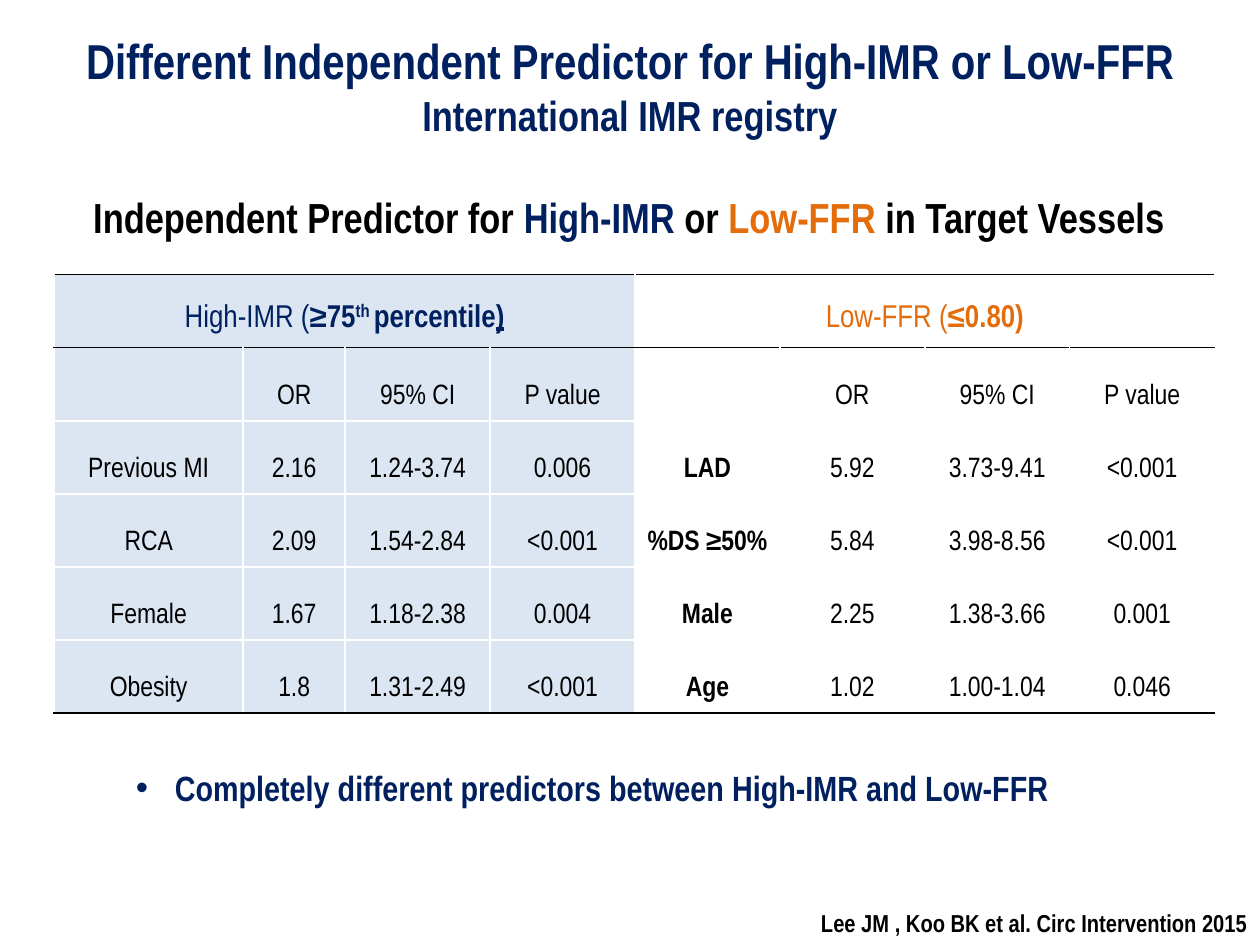
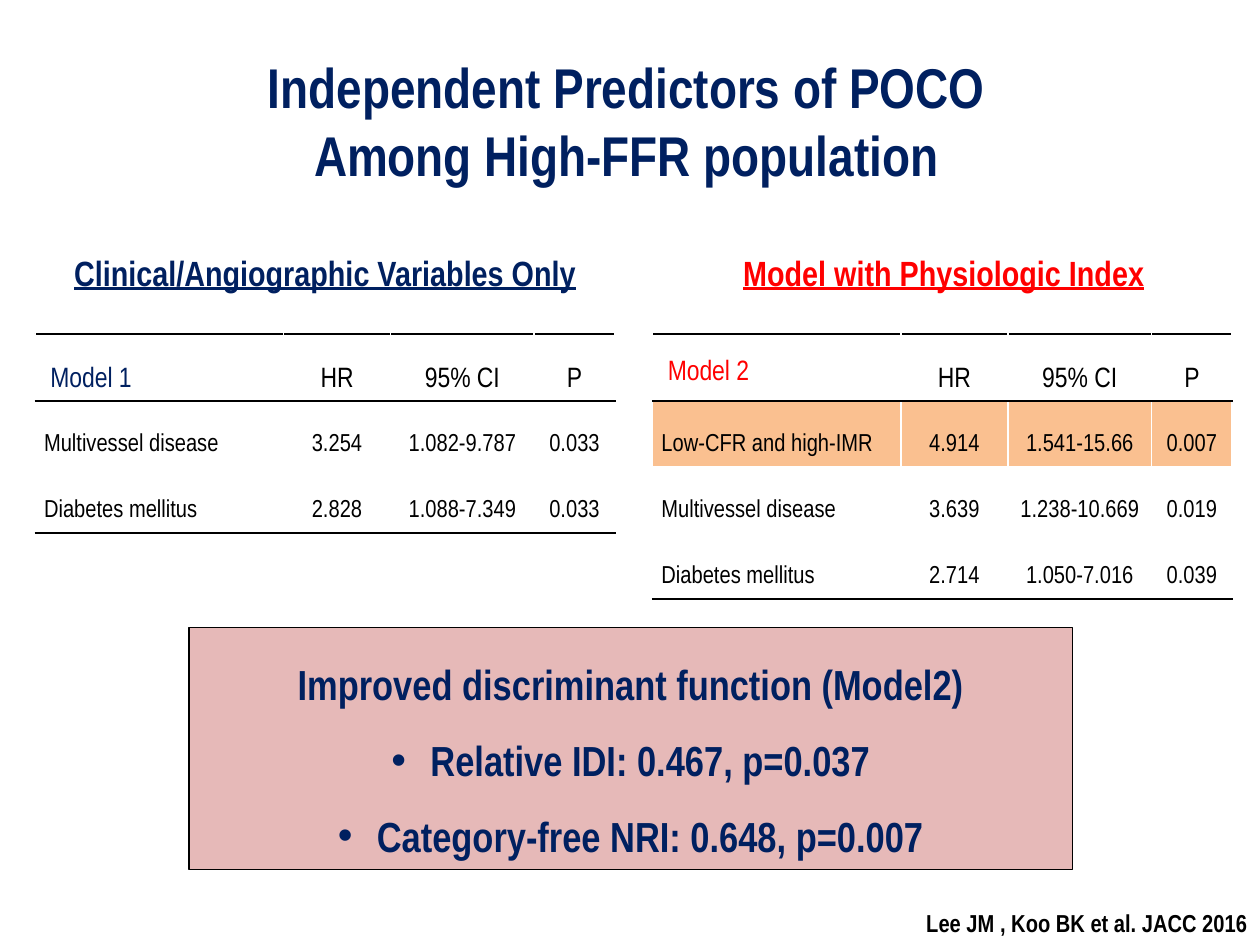
from dataclasses import dataclass, replace

from lxml import etree
from pptx import Presentation
from pptx.dml.color import RGBColor
from pptx.enum.shapes import MSO_SHAPE
from pptx.enum.text import MSO_ANCHOR, MSO_AUTO_SIZE, PP_ALIGN
from pptx.oxml.ns import qn
from pptx.util import Inches, Pt

LEFT, CENTER, RIGHT, JUSTIFY = PP_ALIGN.LEFT, PP_ALIGN.CENTER, PP_ALIGN.RIGHT, PP_ALIGN.JUSTIFY
TOP, MIDDLE = MSO_ANCHOR.TOP, MSO_ANCHOR.MIDDLE
GROW, FIXED = MSO_AUTO_SIZE.SHAPE_TO_FIT_TEXT, MSO_AUTO_SIZE.NONE
RECTANGLE = MSO_SHAPE.RECTANGLE

WIDTH, HEIGHT = Inches(10), Inches(7.5)
COLUMNS, ROWS = 100, 75
FONT = "Arial Narrow"
NAVY, ORANGE, RED, BLACK, WHITE = "002060", "E46C0A", "FF0000", "000000", "FFFFFF"
PALE_BLUE, PEACH, ROSE = "DCE6F2", "FAC090", "E6B9B8"


@dataclass
class Span:
    """Part of a paragraph; a value of None follows the paragraph."""
    text: str
    color: str = None
    bold: bool = None
    underline: bool = None
    superscript: bool = False


@dataclass
class Para:
    """Text is a string or a list of spans; margin and indent are in inches."""
    text: object
    size: int = 24
    color: str = NAVY
    bold: bool = True
    underline: bool = None
    align: int = CENTER
    spacing: float = None
    margin: float = 0
    indent: float = 0
    bullet: bool = False


@dataclass
class Cell:
    para: Para
    fill: str = None
    anchor: int = MIDDLE


def rgb(color):
    return RGBColor.from_string(color)


def column(count):
    return int(WIDTH * count / COLUMNS)


def row(count):
    return int(HEIGHT * count / ROWS)


def place(left, top, width, height):
    return column(left), row(top), column(width), row(height)


class Slides:
    def __init__(self):
        self.deck = Presentation()
        self.deck.slide_width, self.deck.slide_height = WIDTH, HEIGHT
        self.page = None

    def new_page(self):
        self.page = self.deck.slides.add_slide(self.deck.slide_layouts[6])

    def add_paras(self, frame, paras):
        for index, content in enumerate(paras):
            para = frame.add_paragraph() if index else frame.paragraphs[0]
            para.alignment = content.align
            if content.spacing:
                para.line_spacing = content.spacing
            font = para.font
            font.name, font.size = FONT, Pt(content.size)
            font.bold, font.underline = content.bold, content.underline
            font.color.rgb = rgb(content.color)
            self.indent(para, content)
            spans = content.text
            for span in [Span(spans)] if isinstance(spans, str) else spans:
                self.add_span(para, span)

    def indent(self, para, content):
        properties = para._p.get_or_add_pPr()
        properties.set("marL", str(Inches(content.margin)))
        properties.set("indent", str(Inches(content.indent)))
        if content.bullet:
            bullet_font = etree.Element(qn("a:buFont"), typeface="Arial")
            bullet = etree.Element(qn("a:buChar"), char="•")
            defaults = properties.find(qn("a:defRPr"))
            defaults.addprevious(bullet_font)
            defaults.addprevious(bullet)

    def add_span(self, para, span):
        run = para.add_run()
        run.text = span.text
        if span.color:
            run.font.color.rgb = rgb(span.color)
        if span.bold is not None:
            run.font.bold = span.bold
        if span.underline is not None:
            run.font.underline = span.underline
        if span.superscript:
            run._r.get_or_add_rPr().set("baseline", "30000")

    def text(self, at, *paras, anchor=TOP, size_rule=GROW, wrap=True):
        box = self.page.shapes.add_textbox(*place(*at))
        self.fill_frame(box.text_frame, paras, anchor, size_rule, wrap)

    def fill_frame(self, frame, paras, anchor, size_rule, wrap):
        frame.word_wrap = wrap
        frame.auto_size = size_rule
        frame.vertical_anchor = anchor
        self.add_paras(frame, paras)

    def panel(self, at, fill, *paras):
        shape = self.page.shapes.add_shape(RECTANGLE, *place(*at))
        shape.shadow.inherit = False
        shape.fill.solid()
        shape.fill.fore_color.rgb = rgb(fill)
        shape.line.color.rgb = rgb(BLACK)
        shape.line.width = Pt(0.75)
        self.fill_frame(shape.text_frame, paras, TOP, GROW, True)

    def heading(self, left, text, color):
        self.text((left, 17.8, 43.2, 5.4),
                  Para(text, 20, color, underline=True, spacing=1.5))

    def citation(self, width, text):
        self.text((COLUMNS - width, 71.6, width, 3.4),
                  Para(text, 14, BLACK, align=RIGHT), wrap=False)

    def table(self, left, top, widths, row_height, cells):
        """Draw rows of cells; a None continues the cell on its left."""
        at = place(left, top, sum(widths), row_height * len(cells))
        table = self.page.shapes.add_table(len(cells), len(widths), *at).table
        table.first_row = table.horz_banding = False
        for index, width in enumerate(widths):
            table.columns[index].width = column(width)
        for y, line in enumerate(cells):
            table.rows[y].height = row(row_height)
            for x, content in enumerate(line):
                cell = table.cell(y, x)
                self.borders(cell, y < 2, y in (0, len(cells) - 1))
                if content:
                    self.fill_cell(cell, content)
                    end = x
                    while end + 1 < len(line) and line[end + 1] is None:
                        end += 1
                    if end > x:
                        cell.merge(table.cell(y, end))

    def fill_cell(self, cell, content):
        cell.margin_left = cell.margin_right = Inches(0.07)
        cell.margin_top = cell.margin_bottom = 0
        cell.vertical_anchor = content.anchor
        if content.fill:
            cell.fill.solid()
            cell.fill.fore_color.rgb = rgb(content.fill)
        else:
            cell.fill.background()
        self.add_paras(cell.text_frame, [replace(content.para, spacing=2)])

    def borders(self, cell, black_top, black_bottom):
        properties = cell._tc.get_or_add_tcPr()
        sides = {"lnL": False, "lnR": False, "lnT": black_top, "lnB": black_bottom}
        for side, black in sides.items():
            line = etree.SubElement(properties, qn(f"a:{side}"), w=str(Pt(1)))
            fill = etree.SubElement(line, qn("a:solidFill"))
            etree.SubElement(fill, qn("a:srgbClr"), val=BLACK if black else WHITE)


def predictor_page(slides):
    slides.new_page()
    slides.text((5, 1.3, 90, 10.9),
                Para("Different Independent Predictor for High-IMR or Low-FFR", 28),
                Para("International IMR registry"),
                anchor=MIDDLE, size_rule=FIXED)
    high = Para([Span("High-IMR (", bold=False), Span("≥75"),
                 Span("th ", superscript=True), Span("percentile"),
                 Span(")", underline=True)], 18)
    low = Para([Span("Low-FFR (", bold=False), Span("≤0.80)")], 18, ORANGE)
    cells = [[Cell(high, PALE_BLUE, TOP), None, None, None,
              Cell(low, anchor=TOP), None, None, None]]
    measures = ["", "OR", "95% CI", "P value"]
    values = [
        measures + measures,
        ["Previous MI", "2.16", "1.24-3.74", "0.006", "LAD", "5.92", "3.73-9.41", "<0.001"],
        ["RCA", "2.09", "1.54-2.84", "<0.001", "%DS ≥50%", "5.84", "3.98-8.56", "<0.001"],
        ["Female", "1.67", "1.18-2.38", "0.004", "Male", "2.25", "1.38-3.66", "0.001"],
        ["Obesity", "1.8", "1.31-2.49", "<0.001", "Age", "1.02", "1.00-1.04", "0.046"],
    ]
    for line in values:
        cells.append([Cell(Para(text, 16, BLACK, bold=x == 4), PALE_BLUE if x < 4 else None)
                      for x, text in enumerate(line)])
    slides.table(4.3, 21.8, [15, 8.1] + [11.5] * 6, 5.8, cells)
    slides.text((5.4, 14.7, 89, 5),
                Para([Span("Independent Predictor for "), Span("High-IMR", NAVY),
                      Span(" or "), Span("Low-FFR", ORANGE),
                      Span(" in Target Vessels")], color=BLACK))
    slides.citation(36.2, "Lee JM , Koo BK et al. Circ Intervention 2015")
    slides.text((9.8, 58.7, 80.3, 5.4),
                Para("Completely different predictors between High-IMR and Low-FFR", 20,
                     align=JUSTIFY, spacing=1.5, margin=0.31, indent=-0.31, bullet=True))


def model_table(slides, left, name, color, anchor, values, highlight=None):
    header = [Cell(Para(name, 16, color, False, align=LEFT, margin=0.05), anchor=anchor)]
    header += [Cell(Para(text, 16, BLACK, False)) for text in ("HR", "95% CI", "P")]
    body = [[Cell(Para(text, 14, BLACK, False, align=CENTER if x else LEFT),
                  PEACH if line[0] == highlight else None)
             for x, text in enumerate(line)] for line in values]
    slides.table(left, 26.5, [19.7, 8.5, 11.4, 6.4], 5.24, [header] + body)


def model_page(slides):
    slides.new_page()
    slides.text((0, 3.7, 99.5, 11.8),
                Para("Independent Predictors of POCO", 32, indent=-0.11),
                Para("Among High-FFR population", 32))
    points = [Para(text, spacing=1.5, margin=0.31, indent=-0.31, bullet=True)
              for text in ("Relative IDI: 0.467, p=0.037", "Category-free NRI: 0.648, p=0.007")]
    slides.panel((15, 49.8, 70.1, 19.2), ROSE,
                 Para("Improved discriminant function (Model2)", spacing=1.5, indent=-0.24),
                 *points)
    model_table(slides, 2.8, "Model 1", NAVY, MIDDLE, [
        ["Multivessel disease", "3.254", "1.082-9.787", "0.033"],
        ["Diabetes mellitus", "2.828", "1.088-7.349", "0.033"],
    ])
    combined = "Low-CFR and high-IMR"
    model_table(slides, 51.8, "Model 2", RED, TOP, [
        [combined, "4.914", "1.541-15.66", "0.007"],
        ["Multivessel disease", "3.639", "1.238-10.669", "0.019"],
        ["Diabetes mellitus", "2.714", "1.050-7.016", "0.039"],
    ], combined)
    slides.heading(4.2, "Clinical/Angiographic Variables Only", NAVY)
    slides.heading(53.3, "Model with Physiologic Index", RED)
    slides.citation(27.8, "Lee JM , Koo BK et al. JACC 2016")


def main():
    slides = Slides()
    predictor_page(slides)
    model_page(slides)
    slides.deck.save("out.pptx")


if __name__ == "__main__":
    main()
